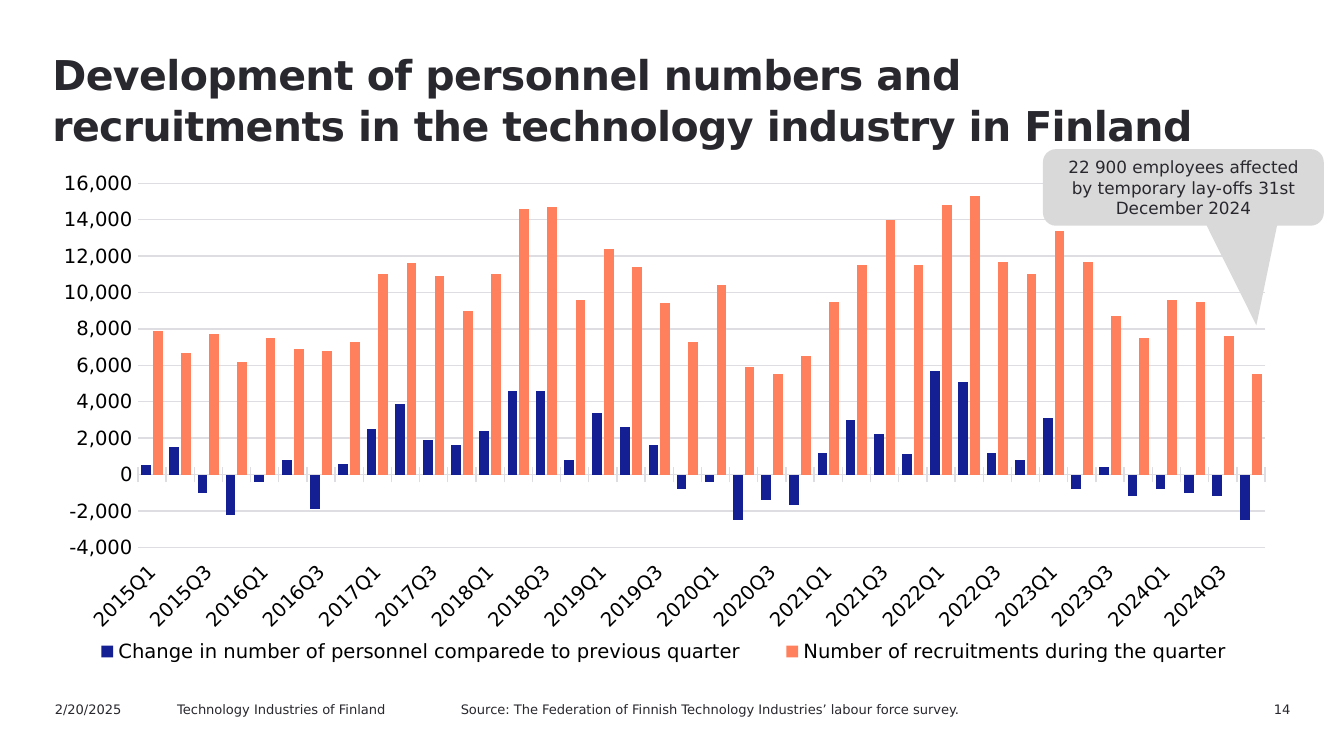
from lxml import etree
from pptx import Presentation
from pptx.chart.data import CategoryChartData
from pptx.dml.color import RGBColor
from pptx.enum.chart import XL_CHART_TYPE, XL_LEGEND_POSITION, XL_TICK_LABEL_POSITION, XL_TICK_MARK
from pptx.enum.shapes import MSO_SHAPE
from pptx.enum.text import MSO_ANCHOR, MSO_AUTO_SIZE, PP_ALIGN
from pptx.oxml.ns import qn
from pptx.util import Inches, Pt

COLUMNS = XL_CHART_TYPE.COLUMN_CLUSTERED
LEGEND_BOTTOM = XL_LEGEND_POSITION.BOTTOM
LABELS_LOW = XL_TICK_LABEL_POSITION.LOW
TICK_CROSS, TICK_NONE = XL_TICK_MARK.CROSS, XL_TICK_MARK.NONE
CALLOUT = MSO_SHAPE.ROUNDED_RECTANGULAR_CALLOUT
TOP, MIDDLE = MSO_ANCHOR.TOP, MSO_ANCHOR.MIDDLE
NO_FIT = MSO_AUTO_SIZE.NONE
LEFT, CENTER, RIGHT = PP_ALIGN.LEFT, PP_ALIGN.CENTER, PP_ALIGN.RIGHT

FONT = "DejaVu Sans"
INK, BLACK, GRID, CALLOUT_GRAY = "29282E", "000000", "DEDDE1", "D9D9D9"

TITLE = "Development of personnel numbers and recruitments in the technology industry in Finland"
CALLOUT_TEXT = "22 900 employees affected by temporary lay-offs 31st December 2024"
FOOTERS = [
    ("2/20/2025", 0.31, 1, LEFT),
    ("Technology Industries of Finland", 1.22, 1.94, LEFT),
    ("Source: The Federation of Finnish Technology Industries’ labour force survey.", 3.33, 4.11, LEFT),
    ("14", 8.76, 0.94, RIGHT),
]
QUARTERS = [f"{year}Q{quarter}" for year in range(2015, 2025) for quarter in range(1, 5)]
SERIES = [
    ("Change in number of personnel comparede to previous quarter", "141F94", [
        500, 1500, -1000, -2200, -400, 800, -1900, 600, 2500, 3900,
        1900, 1600, 2400, 4600, 4600, 800, 3400, 2600, 1600, -800,
        -400, -2500, -1400, -1700, 1200, 3000, 2200, 1100, 5700, 5100,
        1200, 800, 3100, -800, 400, -1200, -800, -1000, -1200, -2500]),
    ("Number of recruitments during the quarter", "FF805C", [
        7900, 6700, 7700, 6200, 7500, 6900, 6800, 7300, 11000, 11600,
        10900, 9000, 11000, 14600, 14700, 9600, 12400, 11400, 9400, 7300,
        10400, 5900, 5500, 6500, 9500, 11500, 14000, 11500, 14800, 15300,
        11700, 11000, 13400, 11700, 8700, 7500, 9600, 9500, 7600, 5500]),
]
EDGES = {"xMode": "edge", "yMode": "edge"}
PLOT_LAYOUT = {"layoutTarget": "inner", **EDGES, "x": 0.08, "y": 0.04, "w": 0.9, "h": 0.7}
LEGEND_LAYOUT = {**EDGES, "x": 0.02, "y": 0.91, "w": 0.96, "h": 0.06}


def rgb(color):
    """Turn a hex string into a colour."""
    return RGBColor.from_string(color)


def apply(target, values):
    """Set each attribute named in a dict."""
    for name, value in values.items():
        setattr(target, name, value)


def style_font(font, size, color=INK, bold=False):
    """Set the face, size and colour of a font."""
    apply(font, {"name": FONT, "size": Pt(size), "bold": bold})
    font.color.rgb = rgb(color)


def style_line(line, color):
    """Give a chart line its colour and width."""
    line.color.rgb = rgb(color)
    line.width = Pt(0.75)


def write(shape, text, size, align, anchor, bold=False):
    """Write one paragraph in a shape and return its paragraph and run."""
    frame = shape.text_frame
    apply(frame, {"word_wrap": True, "auto_size": NO_FIT, "vertical_anchor": anchor})
    para = frame.paragraphs[0]
    para.alignment = align
    span = para.add_run()
    span.text = text
    style_font(span.font, size, bold=bold)
    return para, span


def add_title(slide):
    """Place and format the slide title."""
    title = slide.shapes.title
    apply(title, {"left": Inches(0.28), "top": Inches(0.31),
                  "width": Inches(8.74), "height": Inches(0.71)})
    apply(title.text_frame, {"margin_left": Inches(0.11), "margin_right": 0,
                             "margin_top": Inches(0.05), "margin_bottom": 0})
    para, span = write(title, TITLE, 22, LEFT, TOP, bold=True)
    apply(para, {"line_spacing": Pt(27), "space_before": Pt(0)})
    span.font._element.set("spc", "-30")


def add_footer(slide, text, left, width, align):
    """Add one small text to the footer row."""
    box = slide.shapes.add_textbox(Inches(left), Inches(5.17), Inches(width), Inches(0.18))
    box.text_frame.margin_bottom = 0
    write(box, text, 7, align, TOP)


def set_layout(parent, position, values):
    """Fix the place of a chart part as fractions of the chart."""
    for old in parent.findall(qn("c:layout")):
        parent.remove(old)
    layout = etree.Element(qn("c:layout"))
    manual = etree.SubElement(layout, qn("c:manualLayout"))
    for name, value in values.items():
        etree.SubElement(manual, qn(f"c:{name}")).set("val", str(value))
    parent.insert(position, layout)


def format_axes(chart):
    """Format both axes and the gridlines."""
    quarters, people = chart.category_axis, chart.value_axis
    for axis in (quarters, people):
        style_font(axis.tick_labels.font, 10.5, BLACK)
    apply(quarters, {"major_tick_mark": TICK_CROSS, "minor_tick_mark": TICK_NONE,
                     "tick_label_position": LABELS_LOW})
    style_line(quarters.format.line, GRID)
    quarters._element.find(qn("c:txPr")).find(qn("a:bodyPr")).set("rot", "-2700000")
    apply(people, {"minimum_scale": -4000, "maximum_scale": 16000, "major_unit": 2000,
                   "major_tick_mark": TICK_NONE, "minor_tick_mark": TICK_NONE,
                   "has_major_gridlines": True})
    apply(people.tick_labels, {"number_format": "#,##0", "number_format_is_linked": False})
    people.format.line.fill.background()
    style_line(people.major_gridlines.format.line, GRID)


def add_personnel_chart(slide):
    """Add the column chart of personnel change and recruitments."""
    data = CategoryChartData(number_format="#,##0")
    data.categories = QUARTERS
    for name, _, values in SERIES:
        data.add_series(name, values)
    chart = slide.shapes.add_chart(
        COLUMNS, Inches(0.28), Inches(1.21), Inches(9.32), Inches(3.87), data).chart
    style_font(chart.font, 10)
    apply(chart, {"has_title": False, "has_legend": True})
    apply(chart.legend, {"position": LEGEND_BOTTOM, "include_in_layout": False})
    style_font(chart.legend.font, 10.5, BLACK)
    plot = chart.plots[0]
    apply(plot, {"gap_width": 70, "overlap": -21, "vary_by_categories": False})
    for series, (_, color, _) in zip(plot.series, SERIES):
        series.format.fill.solid()
        series.format.fill.fore_color.rgb = rgb(color)
    format_axes(chart)
    set_layout(chart._chartSpace.chart.plotArea, 0, PLOT_LAYOUT)
    set_layout(chart.legend._element, 1, LEGEND_LAYOUT)


def add_callout(slide):
    """Add the callout that points to the last quarter."""
    callout = slide.shapes.add_shape(
        CALLOUT, Inches(7.76), Inches(1.11), Inches(2.09), Inches(0.57))
    for index, value in enumerate((0.26, 1.8, 0.17)):
        callout.adjustments[index] = value
    callout.shadow.inherit = False
    callout.fill.solid()
    callout.fill.fore_color.rgb = rgb(CALLOUT_GRAY)
    callout.line.fill.background()
    write(callout, CALLOUT_TEXT, 9, CENTER, MIDDLE)


def main():
    """Build the slide and save the deck."""
    deck = Presentation()
    apply(deck, {"slide_width": Inches(10), "slide_height": Inches(10 * 9 / 16)})
    slide = deck.slides.add_slide(deck.slide_layouts[5])
    add_title(slide)
    for footer in FOOTERS:
        add_footer(slide, *footer)
    add_personnel_chart(slide)
    add_callout(slide)
    deck.save("out.pptx")


if __name__ == "__main__":
    main()
